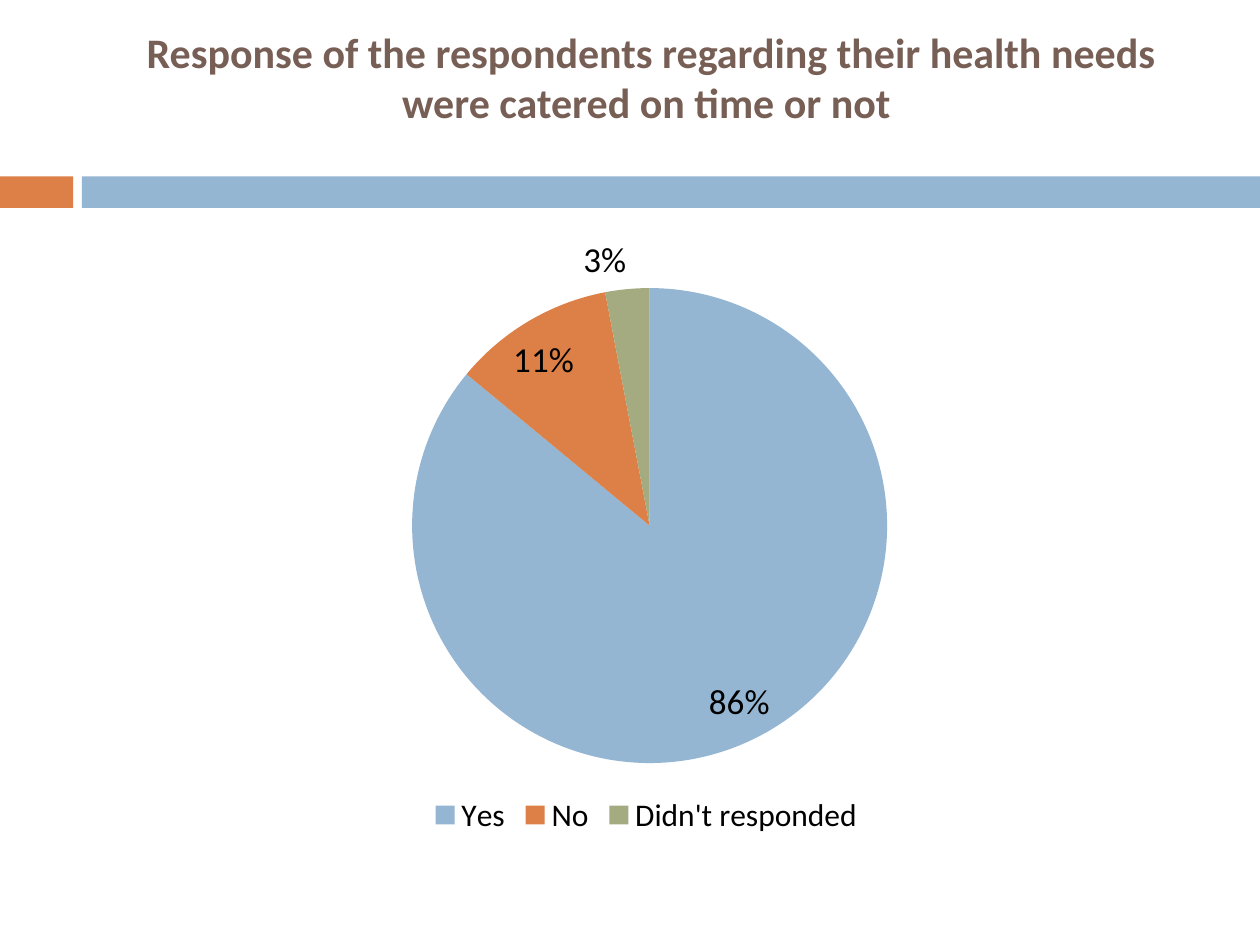
from pptx import Presentation
from pptx import util as u
from pptx.chart import data as cd
from pptx.dml import color
from pptx.enum import chart as ce
from pptx.enum import shapes, text

BLUE, RUST, SAGE, BROWN, BLACK = "94B6D2", "DD8047", "A5AB81", "775F55", "000000"


def rgb(code):
    """Turn a hex string into a colour."""
    return color.RGBColor.from_string(code)


class Deck:
    """Holds the style and the current slide; lengths are shares of the slide."""

    face = "Calibri"

    def __init__(self, wide, high):
        """Open a deck with one blank slide."""
        self.prs = Presentation()
        self.prs.slide_width, self.prs.slide_height = u.Inches(wide), u.Inches(high)
        self.slide = self.prs.slides.add_slide(self.prs.slide_layouts[6])

    def place(self, x, y, w, h):
        """Turn shares of the slide into lengths."""
        wide, high = self.prs.slide_width, self.prs.slide_height
        return [round(n) for n in (x * wide, y * high, w * wide, h * high)]

    def style(self, font, size, ink, bold=False):
        """Set the face, size and colour of a font."""
        font.name, font.size, font.bold = self.face, u.Pt(size), bold
        font.color.rgb = rgb(ink)

    def bar(self, box, fill):
        """Draw a plain filled rectangle."""
        bar = self.slide.shapes.add_shape(shapes.MSO_SHAPE.RECTANGLE, *self.place(*box))
        bar.shadow.inherit = False
        bar.fill.solid()
        bar.fill.fore_color.rgb = rgb(fill)
        bar.line.fill.background()

    def title(self, box, words, size, ink, foot):
        """Write a bold centred heading with room left at its foot."""
        frame = self.slide.shapes.add_textbox(*self.place(*box)).text_frame
        frame.word_wrap = True
        frame.vertical_anchor = text.MSO_ANCHOR.MIDDLE
        frame.margin_top, frame.margin_bottom = 0, u.Inches(foot)
        para = frame.paragraphs[0]
        para.alignment = text.PP_ALIGN.CENTER
        run = para.add_run()
        run.text = words
        self.style(run.font, size, ink, True)

    def pie(self, box, name, parts):
        """Add a pie from (label, value, colour) parts."""
        data = cd.CategoryChartData()
        data.categories = [part[0] for part in parts]
        data.add_series(name, [part[1] for part in parts])
        kind = ce.XL_CHART_TYPE.PIE
        chart = self.slide.shapes.add_chart(kind, *self.place(*box), data).chart
        self.style(chart.font, 10, BLACK)
        chart.has_title = False
        chart.has_legend = True
        chart.legend.position = ce.XL_LEGEND_POSITION.BOTTOM
        chart.legend.include_in_layout = False
        self.style(chart.legend.font, 18, BLACK)
        plot = chart.plots[0]
        plot.vary_by_categories = True
        for i, part in enumerate(parts):
            fill = plot.series[0].points[i].format.fill
            fill.solid()
            fill.fore_color.rgb = rgb(part[2])
        plot.has_data_labels = True
        tags = plot.data_labels
        tags.show_percentage, tags.show_value = True, False
        tags.number_format, tags.number_format_is_linked = "0%", False
        tags.position = ce.XL_LABEL_POSITION.BEST_FIT
        self.style(tags.font, 20, BLACK)


def main():
    """Build and save the slide."""
    deck = Deck(10, 7.5)
    left, wide = 0.067, 0.892
    top, high = 1.4 / 7.5, 0.25 / 7.5
    deck.bar((0, top, 0.058, high), RUST)
    deck.bar((0.065, top, 0.935, high), BLUE)
    words = " Response of the respondents regarding their health needs were catered on time or not"
    deck.title((left, 0.25 / 7.5, wide, 1.08 / 7.5), words, 24, BROWN, 0.36)
    parts = [("Yes", 86, BLUE), ("No", 11, RUST), ("Didn't responded", 3, SAGE)]
    deck.pie((left, 1.75 / 7.5, wide, 4.92 / 7.5), "Series 1", parts)
    deck.prs.save("out.pptx")


if __name__ == "__main__":
    main()
